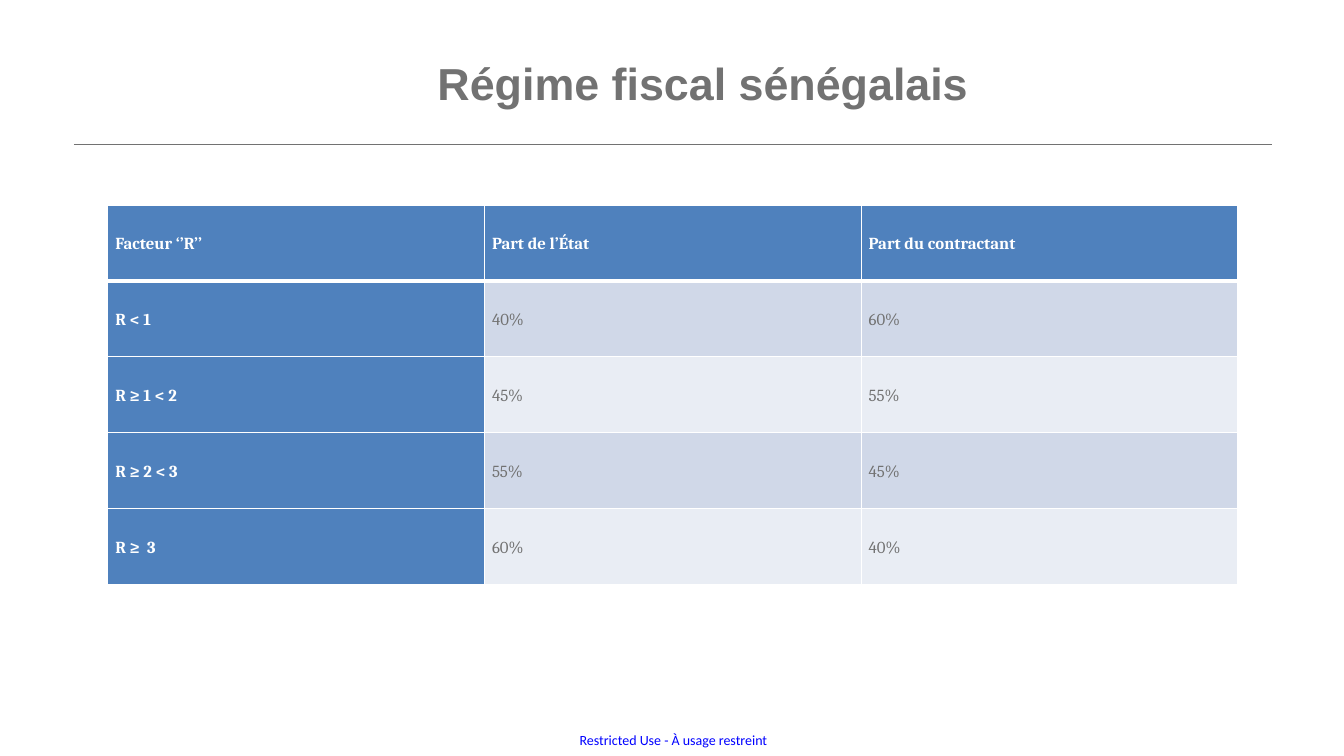
from lxml.etree import SubElement
from pptx import Presentation
from pptx.dml.color import RGBColor
from pptx.enum.shapes import MSO_CONNECTOR
from pptx.enum.text import MSO_ANCHOR, PP_ALIGN
from pptx.oxml import parse_xml
from pptx.oxml.ns import nsdecls, qn
from pptx.util import Pt

GREY, WHITE, BLUE = "727272", "FFFFFF", "4F81BD"
BANDS = ("D0D8E8", "E9EDF4")
SHARES = [
    ("Facteur ‘’R’’", "Part de l’État", "Part du contractant"),
    ("R < 1", "40%", "60%"),
    ("R ≥ 1 < 2", "45%", "55%"),
    ("R ≥ 2 < 3", "55%", "45%"),
    ("R ≥  3", "60%", "40%"),
]


def color(value):
    """Turn a hex string into a colour."""
    return RGBColor.from_string(value)


def add_run(paragraph, text, font_name, size, hex_color, bold=False):
    """Append one formatted run to a paragraph."""
    run = paragraph.add_run()
    run.text = text
    run.font.name = font_name
    run.font.size = Pt(size)
    run.font.bold = bold
    run.font.color.rgb = color(hex_color)


def add_text_box(slide, box, margin_x, margin_y):
    """Add a wrapping, vertically centred text box and return its paragraph."""
    frame = slide.shapes.add_textbox(*map(Pt, box)).text_frame
    frame.word_wrap = True
    frame.vertical_anchor = MSO_ANCHOR.MIDDLE
    frame.margin_left = frame.margin_right = Pt(margin_x)
    frame.margin_top = frame.margin_bottom = Pt(margin_y)
    paragraph = frame.paragraphs[0]
    paragraph.alignment = PP_ALIGN.CENTER
    return paragraph


def add_title(slide, box):
    """Place the slide title in its box."""
    paragraph = add_text_box(slide, box, 7.2, 3.6)
    add_run(paragraph, "Régime fiscal sénégalais", "Arial", 32, GREY, True)


def add_rule(slide, left, top, width):
    """Draw the thin line below the title."""
    rule = slide.shapes.add_connector(
        MSO_CONNECTOR.STRAIGHT, Pt(left), Pt(top), Pt(left + width), Pt(top))
    rule.line.color.rgb = color(GREY)
    rule.line.width = Pt(0.5)
    SubElement(rule._element.spPr, qn("a:effectLst"))


def add_borders(cell, bottom_width):
    """Give a cell white borders, with its own bottom width."""
    properties = cell._tc.get_or_add_tcPr()
    for side, width in (("L", 1), ("R", 1), ("T", 1), ("B", bottom_width)):
        properties.append(parse_xml(
            f'<a:ln{side} {nsdecls("a")} w="{Pt(width)}"><a:solidFill>'
            f'<a:srgbClr val="{WHITE}"/></a:solidFill></a:ln{side}>'))


def add_share_table(slide, box):
    """Fill the box with the table of shares by R factor."""
    left, top, width, height = box
    rows, columns = len(SHARES), len(SHARES[0])
    table = slide.shapes.add_table(rows, columns, *map(Pt, box)).table
    table.first_col = True
    for column in table.columns:
        column.width = Pt(width / columns)
    for row in table.rows:
        row.height = Pt(height / rows)
    for row_index, texts in enumerate(SHARES):
        for column_index, text in enumerate(texts):
            cell = table.cell(row_index, column_index)
            heading = row_index == 0 or column_index == 0
            add_borders(cell, 3 if row_index == 0 else 1)
            cell.fill.solid()
            cell.fill.fore_color.rgb = color(
                BLUE if heading else BANDS[(row_index - 1) % 2])
            cell.vertical_anchor = MSO_ANCHOR.MIDDLE
            cell.margin_left = cell.margin_right = Pt(5.4)
            cell.margin_top = cell.margin_bottom = Pt(5.4)
            paragraph = cell.text_frame.paragraphs[0]
            paragraph.alignment = PP_ALIGN.JUSTIFY
            paragraph.line_spacing = 1.15
            paragraph.space_after = Pt(8)
            add_run(paragraph, text, "Cambria", 12,
                    WHITE if heading else GREY, heading)


def add_footer(slide, box):
    """Place the usage notice at the foot of the slide."""
    paragraph = add_text_box(slide, box, 0, 0)
    add_run(paragraph, "Restricted Use - À usage restreint",
            "Calibri", 10, "0000FF")


def main():
    """Build and save the slide."""
    presentation = Presentation()
    presentation.slide_width, presentation.slide_height = Pt(960), Pt(540)
    slide = presentation.slides.add_slide(presentation.slide_layouts[6])
    add_rule(slide, 52.8, 103.2, 856)
    add_footer(slide, (410, 522.8, 142, 12.2))
    add_title(slide, (113, 18.7, 778.3, 80.6))
    add_share_table(slide, (77, 146.4, 807.2, 271.2))
    presentation.save("out.pptx")


if __name__ == "__main__":
    main()
